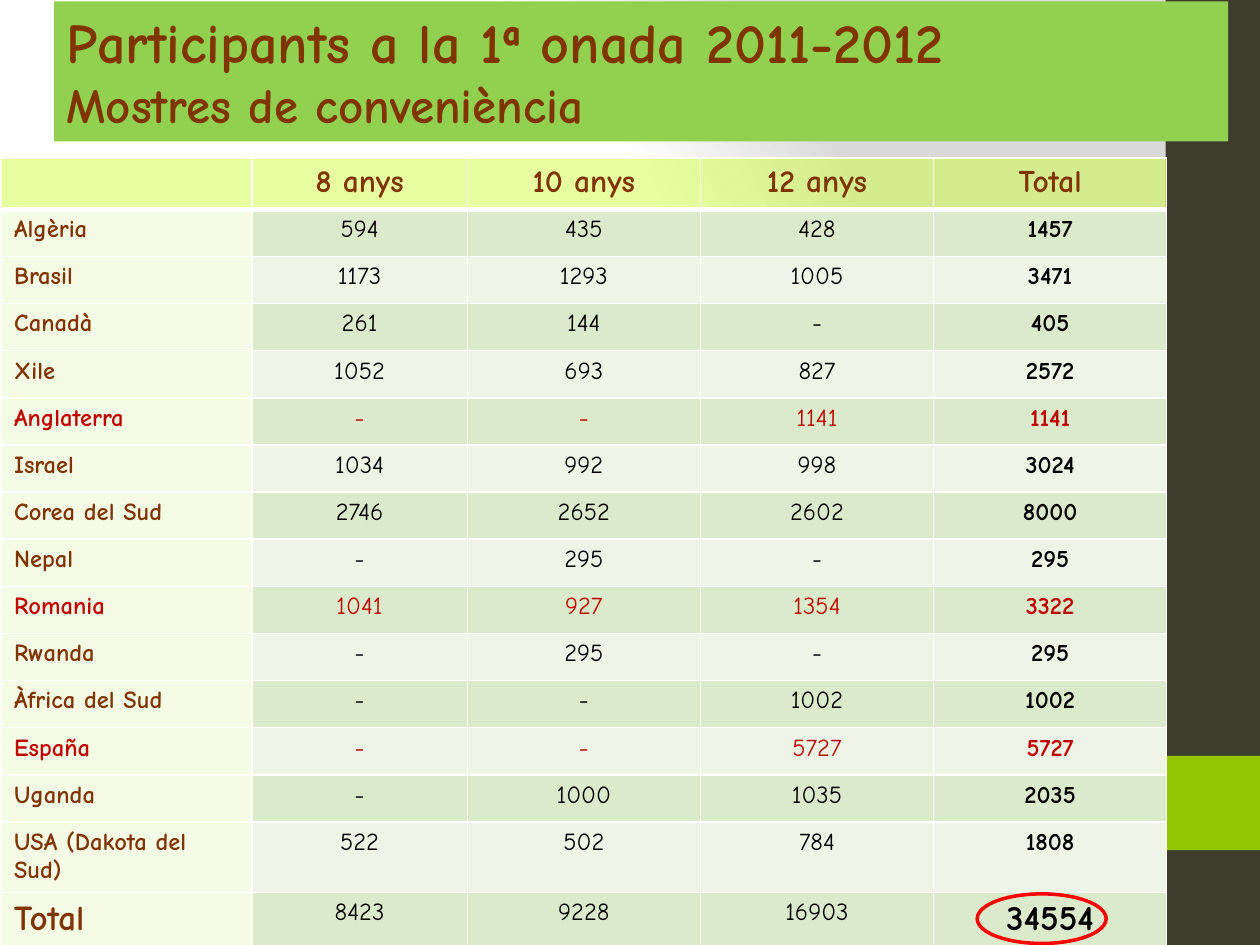
from dataclasses import dataclass

from pptx import Presentation
from pptx import util as u
from pptx.dml.color import RGBColor
from pptx.enum import shapes, text
from pptx.oxml import parse_xml
from pptx.oxml.ns import nsdecls, qn


@dataclass(frozen=True)
class Theme:
    font: str = "Comic Neue"
    brown: str = "803400"
    black: str = "000000"
    red: str = "C00000"
    ring: str = "FF0000"
    white: str = "FFFFFF"
    grey: str = "DADADA"
    banner: str = "92D050"
    side: str = "3E3D2D"
    accent: str = "94C600"
    header: str = "D0FF44"
    label: str = "DFF7AE"
    bands: tuple = ("DCEACC", "EEF5E7")
    title: int = 32
    subtitle: int = 28
    total: int = 20
    heading: int = 18
    body: int = 14


THEME = Theme()

HEADINGS = ["", "8 anys", "10 anys", "12 anys", "Total"]
COUNTRIES = [
    ("Algèria", "594", "435", "428", "1457"),
    ("Brasil", "1173", "1293", "1005", "3471"),
    ("Canadà", "261", "144", "-", "405"),
    ("Xile", "1052", "693", "827", "2572"),
    ("Anglaterra", "-", "-", "1141", "1141"),
    ("Israel", "1034", "992", "998", "3024"),
    ("Corea del Sud", "2746", "2652", "2602", "8000"),
    ("Nepal", "-", "295", "-", "295"),
    ("Romania", "1041", "927", "1354", "3322"),
    ("Rwanda", "-", "295", "-", "295"),
    ("Àfrica del Sud", "-", "-", "1002", "1002"),
    ("España", "-", "-", "5727", "5727"),
    ("Uganda", "-", "1000", "1035", "2035"),
    ("USA (Dakota del Sud)", "522", "502", "784", "1808"),
]
TOTALS = ("Total", "8423", "9228", "16903", "34554")
HIGHLIGHTED = {"Anglaterra", "Romania", "España"}

COLUMN_WIDTHS = [5.05, 4.34, 4.7, 4.7, 4.7]
ROW_HEIGHTS = [1.02] + [0.95] * (len(COUNTRIES) - 1) + [1.42, 1.09]


class SlideBuilder:
    def __init__(self, page, theme):
        self.page = page
        self.theme = theme

    def background(self):
        """Radial gradient, white for most of its reach and grey at the end."""
        self.page.background.fill.gradient()
        gradient = next(self.page.element.iter(qn("a:gradFill")))
        stops = [(0, self.theme.white), (75, self.theme.white), (100, self.theme.grey)]
        stop_xml = "".join(
            f'<a:gs pos="{place * 1000}"><a:srgbClr val="{color}"/></a:gs>'
            for place, color in stops
        )
        gradient.getparent().replace(gradient, parse_xml(
            f'<a:gradFill {nsdecls("a")} rotWithShape="1"><a:gsLst>{stop_xml}</a:gsLst>'
            '<a:path path="circle"><a:fillToRect l="20000" t="50000" r="100000" b="50000"/>'
            "</a:path></a:gradFill>"
        ))

    def shape(self, kind, left, top, width, height, fill=None, line=None):
        box = self.page.shapes.add_shape(
            kind, u.Cm(left), u.Cm(top), u.Cm(width), u.Cm(height))
        box.shadow.inherit = False
        if fill:
            box.fill.solid()
            box.fill.fore_color.rgb = RGBColor.from_string(fill)
        else:
            box.fill.background()
        if line:
            box.line.color.rgb = RGBColor.from_string(line)
            box.line.width = u.Pt(2)
        else:
            box.line.fill.background()
        return box

    def add_words(self, para, words, size, color, bold=True, align=text.PP_ALIGN.LEFT):
        para.alignment = align
        span = para.add_run()
        span.text = words
        style = {"name": self.theme.font, "size": u.Pt(size), "bold": bold}
        for name, value in style.items():
            setattr(span.font, name, value)
        span.font.color.rgb = RGBColor.from_string(color)

    def banner(self, left, top, width, height, lines):
        box = self.shape(shapes.MSO_SHAPE.RECTANGLE, left, top, width, height,
                         self.theme.banner)
        frame = box.text_frame
        settings = {
            "word_wrap": True,
            "auto_size": text.MSO_AUTO_SIZE.SHAPE_TO_FIT_TEXT,
            "vertical_anchor": text.MSO_ANCHOR.TOP,
        }
        for name, value in settings.items():
            setattr(frame, name, value)
        for index, (words, size) in enumerate(lines):
            para = frame.add_paragraph() if index else frame.paragraphs[0]
            self.add_words(para, words, size, self.theme.brown)

    def paint_cell(self, cell, fill, alpha=100, bottom=1):
        """Fill a cell and draw its white borders."""
        cell.fill.solid()
        cell.fill.fore_color.rgb = RGBColor.from_string(fill)
        properties = cell._tc.get_or_add_tcPr()
        if alpha < 100:
            color = next(properties.iter(qn("a:srgbClr")))
            color.append(parse_xml(f'<a:alpha {nsdecls("a")} val="{alpha * 1000}"/>'))
        borders = {"L": 1, "R": 1, "T": 1, "B": bottom}
        for index, (side, points) in enumerate(borders.items()):
            properties.insert(index, parse_xml(
                f'<a:ln{side} {nsdecls("a")} w="{u.Pt(points)}"><a:solidFill>'
                f'<a:srgbClr val="{self.theme.white}"/></a:solidFill></a:ln{side}>'
            ))

    def table(self, left, top):
        theme = self.theme
        rows = [HEADINGS, *COUNTRIES, TOTALS]
        grid = self.page.shapes.add_table(
            len(rows), len(HEADINGS), u.Cm(left), u.Cm(top),
            u.Cm(sum(COLUMN_WIDTHS)), u.Cm(sum(ROW_HEIGHTS))).table
        grid.first_row = grid.horz_banding = False
        for column, width in zip(grid.columns, COLUMN_WIDTHS):
            column.width = u.Cm(width)
        for row, height in zip(grid.rows, ROW_HEIGHTS):
            row.height = u.Cm(height)

        last_row, last_column = len(rows) - 1, len(HEADINGS) - 1
        for r, values in enumerate(rows):
            for c, words in enumerate(values):
                cell = grid.cell(r, c)
                size = theme.body
                if r == 0:
                    self.paint_cell(cell, theme.header, alpha=50, bottom=3)
                    size = theme.heading
                elif c == 0:
                    self.paint_cell(cell, theme.label, alpha=30)
                else:
                    self.paint_cell(cell, theme.bands[(r - 1) % 2])
                if r == last_row and c in (0, last_column):
                    size = theme.total
                if values[0] in HIGHLIGHTED:
                    color = theme.red
                else:
                    color = theme.brown if r == 0 or c == 0 else theme.black
                if words:
                    self.add_words(
                        cell.text_frame.paragraphs[0], words, size, color,
                        bold=r == 0 or c in (0, last_column),
                        align=text.PP_ALIGN.CENTER if c else text.PP_ALIGN.LEFT)


def main():
    deck = Presentation()
    deck.slide_width, deck.slide_height = u.Cm(25.4), u.Cm(19.05)
    builder = SlideBuilder(deck.slides.add_slide(deck.slide_layouts[6]), THEME)
    builder.background()
    rectangle = shapes.MSO_SHAPE.RECTANGLE
    builder.shape(rectangle, 23.5, 0, 1.9, 19.05, THEME.side)
    builder.shape(rectangle, 23.5, 15.24, 1.9, 1.9, THEME.accent)
    builder.table(0.03, 3.19)
    builder.banner(1.09, 0.03, 23.67, 2.82, [
        ("Participants a la 1ª onada 2011-2012", THEME.title),
        ("Mostres de conveniència", THEME.subtitle),
    ])
    builder.shape(shapes.MSO_SHAPE.OVAL, 19.7, 18.02, 2.6, 1, line=THEME.ring)
    deck.save("out.pptx")


if __name__ == "__main__":
    main()
